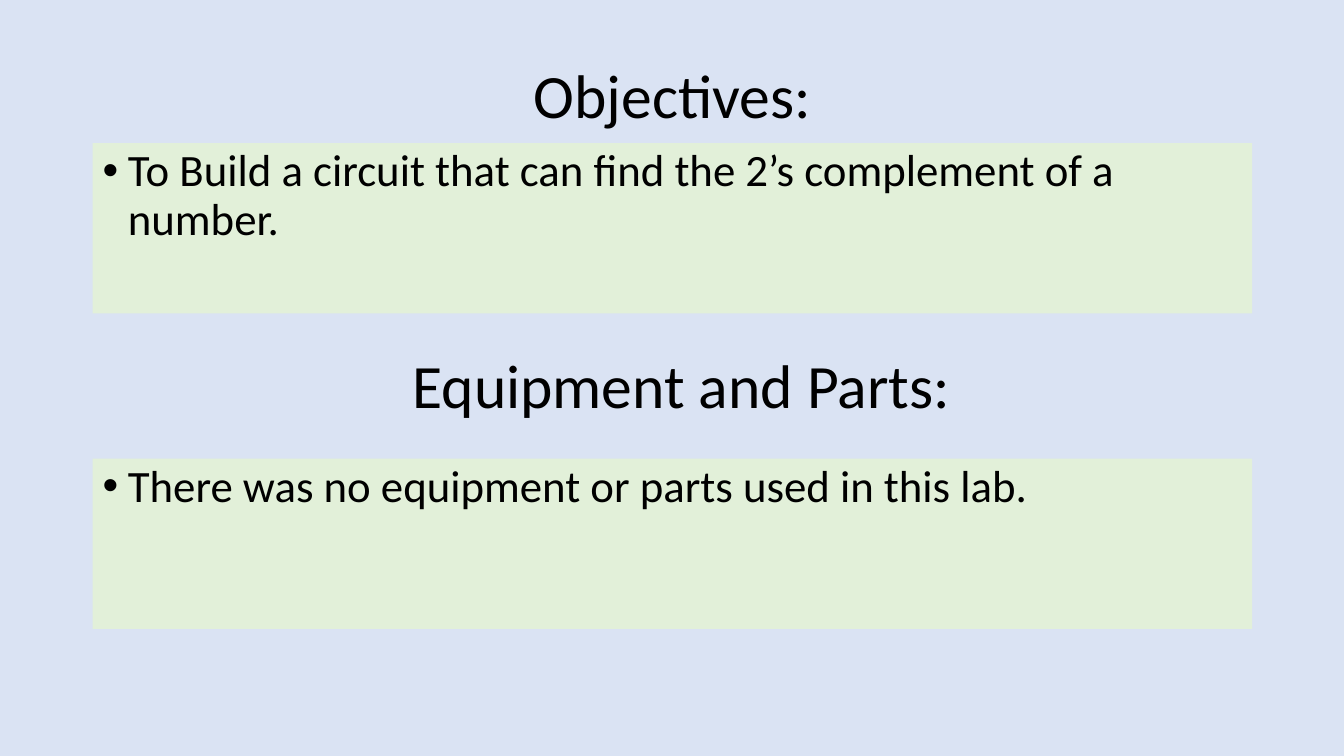
from pptx import Presentation
from pptx.dml.color import RGBColor as RGB
from pptx.enum.shapes import MSO_SHAPE as SHAPE
from pptx.enum.text import MSO_ANCHOR as ANCHOR, PP_ALIGN as ALIGN
from pptx.oxml.ns import qn
from pptx.util import Inches, Pt
from lxml.etree import SubElement

COLORS = {"back": "DAE3F3", "panel": "E2F0D9", "text": "000000"}
FONT = "Calibri"
LEFT, WIDTH = 0.92, 11.5


def color(name):
    return RGB.from_string(COLORS[name])


def write(shape, text, size, anchor, align):
    """Fill the shape with one paragraph and return that paragraph."""
    frame = shape.text_frame
    frame.word_wrap = True
    frame.vertical_anchor = anchor
    para = frame.paragraphs[0]
    para.alignment = align
    para.line_spacing = 0.9
    run = para.add_run()
    run.text = text
    run.font.name = FONT
    run.font.size = Pt(size)
    run.font.color.rgb = color("text")
    return para


def bullet(para):
    para.space_before = Pt(10)
    props = para._p.get_or_add_pPr()
    props.set("marL", str(Inches(0.25)))
    props.set("indent", str(Inches(-0.25)))
    SubElement(props, qn("a:buFont")).set("typeface", "Arial")
    SubElement(props, qn("a:buChar")).set("char", "•")


def heading(slide, text, left, top):
    box = slide.shapes.add_textbox(
        Inches(left), Inches(top), Inches(WIDTH), Inches(1.45))
    write(box, text, 44, ANCHOR.MIDDLE, ALIGN.CENTER)


def panel(slide, text, top):
    rect = slide.shapes.add_shape(
        SHAPE.RECTANGLE, Inches(LEFT), Inches(top), Inches(WIDTH), Inches(1.69))
    rect.shadow.inherit = False
    rect.fill.solid()
    rect.fill.fore_color.rgb = color("panel")
    rect.line.fill.background()
    bullet(write(rect, text, 32, ANCHOR.TOP, ALIGN.LEFT))


def main():
    deck = Presentation()
    deck.slide_width = Inches(13.33)
    deck.slide_height = Inches(7.5)
    slide = deck.slides.add_slide(deck.slide_layouts[6])
    slide.background.fill.solid()
    slide.background.fill.fore_color.rgb = color("back")

    heading(slide, "Objectives:", LEFT, 0.25)
    panel(slide, "To Build a circuit that can find the 2’s complement of a number.", 1.42)
    heading(slide, "Equipment and Parts:", 1.01, 3.13)
    panel(slide, "There was no equipment or parts used in this lab.", 4.55)
    deck.save("out.pptx")


if __name__ == "__main__":
    main()
